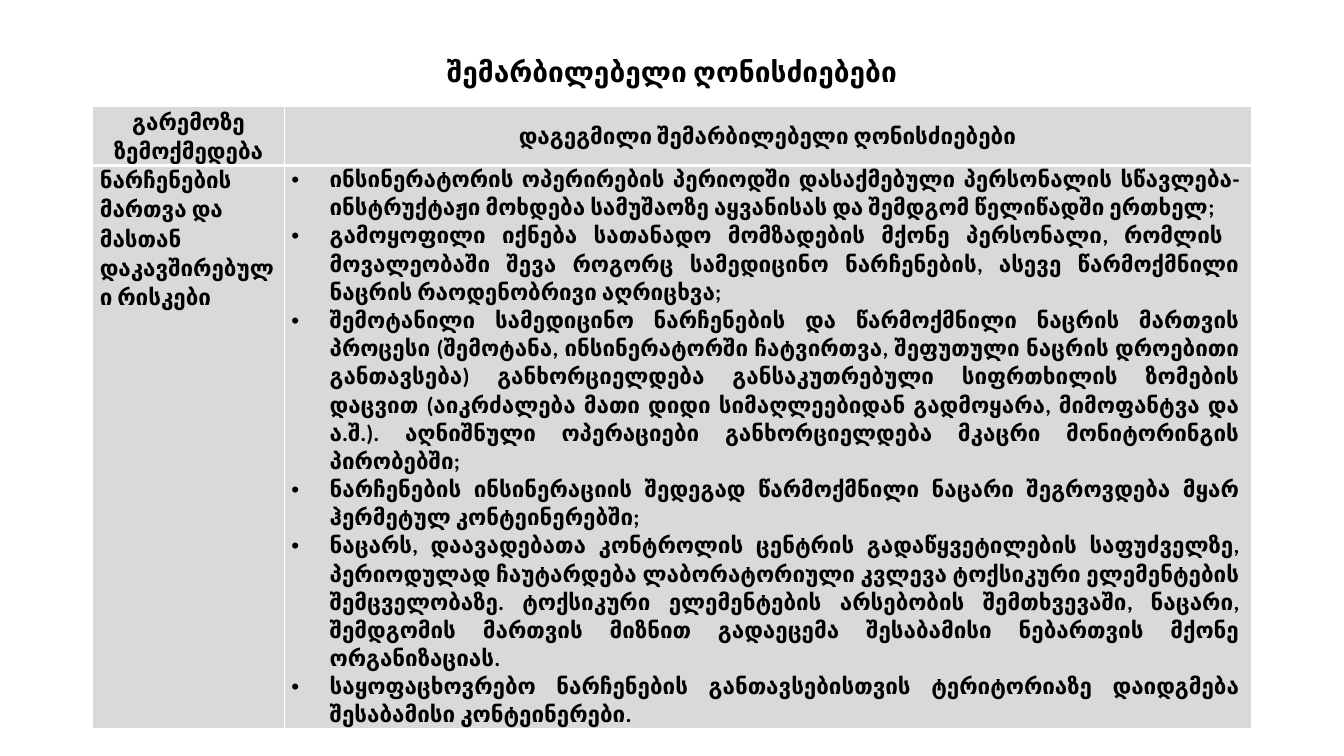
from dataclasses import dataclass

from lxml import etree
from pptx import Presentation
from pptx.dml.color import RGBColor
from pptx.enum.text import MSO_ANCHOR, MSO_AUTO_SIZE, PP_ALIGN
from pptx.oxml.ns import qn
from pptx.util import Inches, Pt

LEFT, CENTER, JUSTIFY = PP_ALIGN.LEFT, PP_ALIGN.CENTER, PP_ALIGN.JUSTIFY
TOP, MIDDLE = MSO_ANCHOR.TOP, MSO_ANCHOR.MIDDLE
NO_FIT = MSO_AUTO_SIZE.NONE
SLIDE_W, SLIDE_H = 13.33, 7.5
MARGIN = 0.92
TITLE_TOP, TITLE_H = 0.4, 0.66
CONTENT_W = SLIDE_W - 2 * MARGIN
COLUMNS = (1.9, CONTENT_W - 1.9)
ROWS = (0.56, 5.29)


@dataclass(frozen=True)
class Theme:
    font: str = "Calibri"
    title_size: int = 20
    body_size: int = 16
    ink: str = "000000"
    cell: str = "D9D9D9"
    border: str = "FFFFFF"
    thin: int = 1
    thick: int = 3
    inset: float = 0.07
    indent: float = 0.38
    right_indent: float = 0.04


@dataclass(frozen=True)
class CellSpec:
    row: int
    col: int
    paragraphs: tuple[str, ...]
    align: PP_ALIGN
    anchor: MSO_ANCHOR = MIDDLE
    bulleted: bool = False


THEME = Theme()
TITLE = "შემარბილებელი ღონისძიებები"
MEASURES = (
    "ინსინერატორის ოპერირების პერიოდში დასაქმებული პერსონალის "
    "სწავლება-ინსტრუქტაჟი მოხდება სამუშაოზე აყვანისას და შემდგომ წელიწადში ერთხელ;",
    "გამოყოფილი იქნება სათანადო მომზადების მქონე პერსონალი, რომლის  მოვალეობაში "
    "შევა როგორც სამედიცინო ნარჩენების, ასევე წარმოქმნილი ნაცრის რაოდენობრივი აღრიცხვა;",
    "შემოტანილი სამედიცინო ნარჩენების და წარმოქმნილი ნაცრის მართვის პროცესი "
    "(შემოტანა, ინსინერატორში ჩატვირთვა, შეფუთული ნაცრის დროებითი განთავსება) "
    "განხორციელდება განსაკუთრებული სიფრთხილის ზომების დაცვით (აიკრძალება მათი დიდი "
    "სიმაღლეებიდან გადმოყარა, მიმოფანტვა და ა.შ.). აღნიშნული ოპერაციები "
    "განხორციელდება მკაცრი მონიტორინგის პირობებში;",
    "ნარჩენების ინსინერაციის შედეგად წარმოქმნილი ნაცარი შეგროვდება მყარ "
    "ჰერმეტულ კონტეინერებში;",
    "ნაცარს, დაავადებათა კონტროლის ცენტრის გადაწყვეტილების საფუძველზე, პერიოდულად "
    "ჩაუტარდება ლაბორატორიული კვლევა ტოქსიკური ელემენტების შემცველობაზე. ტოქსიკური "
    "ელემენტების არსებობის შემთხვევაში, ნაცარი, შემდგომის მართვის მიზნით გადაეცემა "
    "შესაბამისი ნებართვის მქონე ორგანიზაციას.",
    "საყოფაცხოვრებო ნარჩენების განთავსებისთვის ტერიტორიაზე დაიდგმება "
    "შესაბამისი კონტეინერები.",
)
CELLS = (
    CellSpec(0, 0, ("გარემოზე ზემოქმედება",), CENTER),
    CellSpec(0, 1, ("დაგეგმილი შემარბილებელი ღონისძიებები",), CENTER),
    CellSpec(1, 0, ("ნარჩენების მართვა და მასთან დაკავშირებული რისკები",), LEFT, TOP),
    CellSpec(1, 1, MEASURES, JUSTIFY, bulleted=True),
)


def add_run(p, text: str, size: int) -> None:
    r = p.add_run()
    r.text = text
    r.font.name = THEME.font
    r.font.size = Pt(size)
    r.font.bold = True
    r.font.color.rgb = RGBColor.from_string(THEME.ink)


def add_bullet(p) -> None:
    pPr = p._p.get_or_add_pPr()
    indent = Inches(THEME.indent)
    pPr.set("marL", str(indent))
    pPr.set("indent", str(-indent))
    etree.SubElement(pPr, qn("a:buFont"), typeface="Arial")
    etree.SubElement(pPr, qn("a:buChar"), char="•")


def set_borders(cell, row: int) -> None:
    tcPr = cell._tc.get_or_add_tcPr()
    widths = {
        "L": THEME.thin,
        "R": THEME.thin,
        "T": THEME.thick if row else THEME.thin,
        "B": THEME.thin if row else THEME.thick,
    }
    for i, (side, width) in enumerate(widths.items()):
        ln = etree.Element(qn(f"a:ln{side}"), w=str(Pt(width)))
        fill = etree.SubElement(ln, qn("a:solidFill"))
        etree.SubElement(fill, qn("a:srgbClr"), val=THEME.border)
        tcPr.insert(i, ln)


def draw_cell(table, spec: CellSpec) -> None:
    cell = table.cell(spec.row, spec.col)
    cell.fill.solid()
    cell.fill.fore_color.rgb = RGBColor.from_string(THEME.cell)
    cell.vertical_anchor = spec.anchor
    cell.margin_left = Inches(THEME.inset)
    cell.margin_right = Inches(THEME.inset + THEME.right_indent * spec.bulleted)
    cell.margin_top = cell.margin_bottom = 0
    set_borders(cell, spec.row)
    tf = cell.text_frame
    for i, text in enumerate(spec.paragraphs):
        p = tf.add_paragraph() if i else tf.paragraphs[0]
        p.alignment = spec.align
        if spec.bulleted:
            p.line_spacing = 1.03
            p.space_before = Pt(0 if i else 6)
            p.space_after = Pt(0)
            add_bullet(p)
        else:
            p.line_spacing = 1.07
            p.space_after = Pt(6)
        add_run(p, text, THEME.body_size)


def draw_title(s) -> None:
    sp = s.shapes.title
    sp.left, sp.top = Inches(MARGIN), Inches(TITLE_TOP)
    sp.width, sp.height = Inches(CONTENT_W), Inches(TITLE_H)
    tf = sp.text_frame
    tf.word_wrap = True
    tf.auto_size = NO_FIT
    tf.vertical_anchor = MIDDLE
    p = tf.paragraphs[0]
    p.alignment = CENTER
    p.line_spacing = 0.9
    add_run(p, TITLE, THEME.title_size)


def draw_table(s) -> None:
    table = s.shapes.add_table(
        len(ROWS), len(COLUMNS), Inches(MARGIN), Inches(TITLE_TOP + TITLE_H),
        Inches(CONTENT_W), Inches(sum(ROWS)),
    ).table
    for column, width in zip(table.columns, COLUMNS):
        column.width = Inches(width)
    for row, height in zip(table.rows, ROWS):
        row.height = Inches(height)
    for spec in CELLS:
        draw_cell(table, spec)


def main() -> None:
    prs = Presentation()
    prs.slide_width, prs.slide_height = Inches(SLIDE_W), Inches(SLIDE_H)
    s = prs.slides.add_slide(prs.slide_layouts[5])
    draw_title(s)
    draw_table(s)
    prs.save("out.pptx")


if __name__ == "__main__":
    main()
